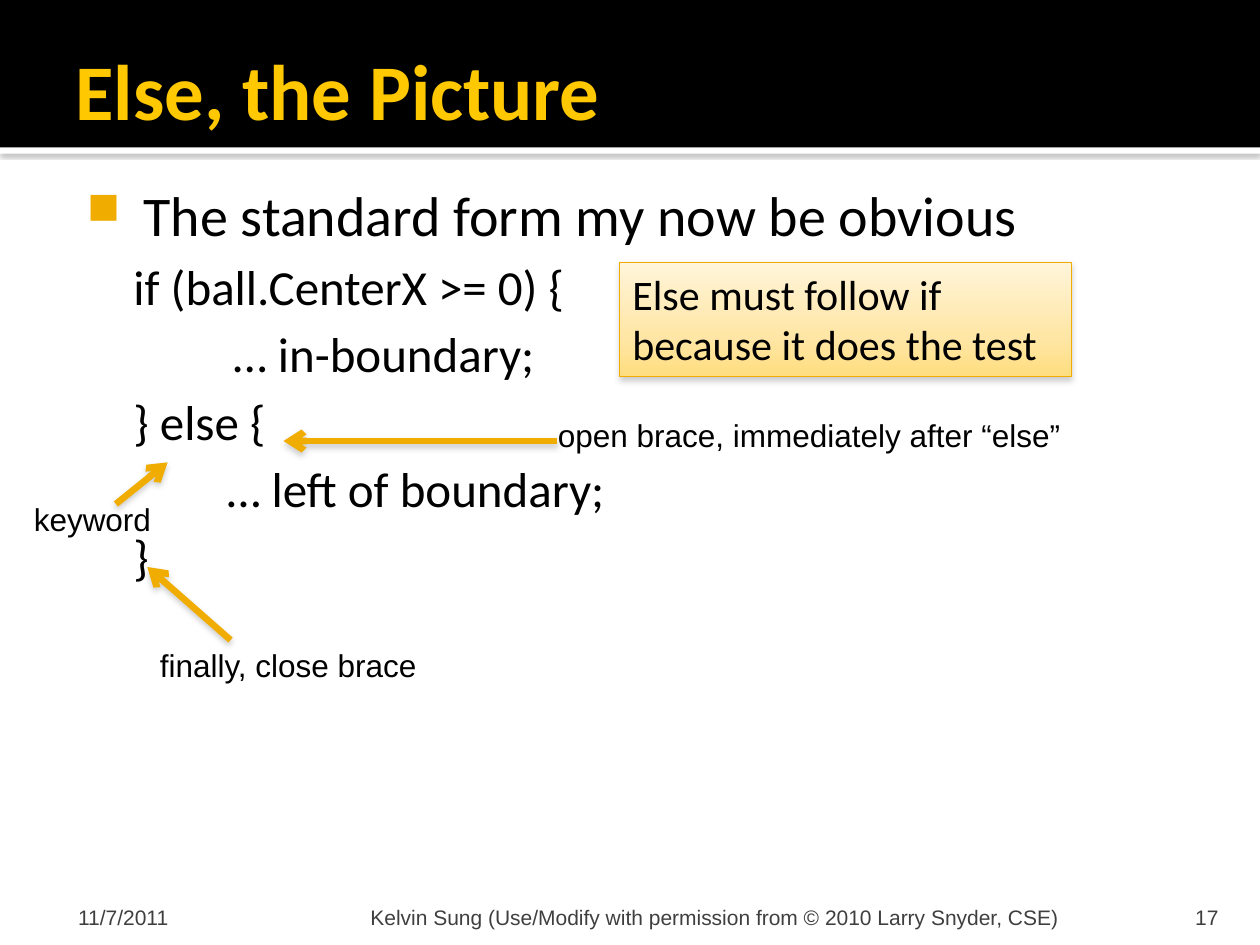
from copy import deepcopy
from typing import NamedTuple

from lxml import etree
from pptx import Presentation
from pptx.dml.color import RGBColor
from pptx.enum import shapes, text
from pptx.oxml.ns import qn
from pptx.util import Inches, Pt

COLORS = {
    "black": "000000", "white": "FFFFFF", "title": "FFC800", "accent": "F0AD00",
    "footer": "3F3F3F", "border": "F0AC00", "shadow": "808080",
}
CALLOUT_STOPS = [(0, "FFF5DA"), (0.65, "FFE6A6"), (1, "FFDE7F")]
DEFAULT_INSETS = (0.1, 0.05, 0.1, 0.05)


class Box(NamedTuple):
    left: float
    top: float
    width: float
    height: float

    def lengths(self):
        return [Inches(value) for value in self]


class Shadow(NamedTuple):
    alpha: int
    blur: float
    distance: float


class Note(NamedTuple):
    words: str
    box: Box
    arrow_start: tuple[float, float]
    arrow_end: tuple[float, float]


class Footer(NamedTuple):
    words: str
    box: Box
    insets: tuple[float, float, float, float]
    align: text.PP_ALIGN = text.PP_ALIGN.LEFT


class BodyLine(NamedTuple):
    words: str
    margin: float


SOFT_SHADOW = Shadow(38, 3.5, 2)
BAR_SHADOW = Shadow(60, 2.5, 0.8)

NOTES = [
    Note("finally, close brace", Box(1.17, 5.08, 2.26, 0.4), (1.83, 5.08), (1.17, 4.5)),
    Note("keyword", Box(0.17, 3.92, 1.14, 0.4), (0.92, 4), (1.33, 3.67)),
    Note("open brace, immediately after “else”", Box(4.33, 3.25, 4.23, 0.4),
         (4.42, 3.5), (2.25, 3.5)),
]
FOOTERS = [
    Footer("11/7/2011", Box(0.5, 7.08, 2.33, 0.3), (0.12, 0.05, 0.05, 0)),
    Footer("Kelvin Sung (Use/Modify with permission from © 2010 Larry Snyder, CSE)",
           Box(2.89, 7.08, 6.02, 0.3), (0.05, 0.05, 0.05, 0)),
    Footer("17", Box(8.97, 7.08, 0.8, 0.3), (0.1, 0.05, 0.1, 0), text.PP_ALIGN.RIGHT),
]
CODE_LINES = [
    BodyLine("if (ball.CenterX >= 0) {", 0.5),
    BodyLine("… in-boundary;", 1.29),
    BodyLine("} else {", 0.5),
    BodyLine("… left of boundary;", 1.24),
    BodyLine("}", 0.5),
]


def rgb(name: str) -> RGBColor:
    return RGBColor.from_string(COLORS[name])


def set_frame(shape, insets=DEFAULT_INSETS, anchor=text.MSO_ANCHOR.TOP, wrap=True):
    frame = shape.text_frame
    frame.auto_size = text.MSO_AUTO_SIZE.NONE
    frame.word_wrap = wrap
    frame.vertical_anchor = anchor
    (frame.margin_left, frame.margin_top,
     frame.margin_right, frame.margin_bottom) = [Inches(inset) for inset in insets]
    return frame


def write(paragraph, words: str, *, size: float, font="Calibri", color="black",
          bold=False, align=text.PP_ALIGN.LEFT, before=0.0):
    paragraph.alignment = align
    paragraph.space_before = Pt(before)
    run = paragraph.add_run()
    run.text = words
    run.font.size, run.font.name, run.font.bold = Pt(size), font, bold
    run.font.color.rgb = rgb(color)


def set_shadow(shape, shadow: Shadow | None = None):
    """Replace the theme shadow; call after fill and line are set."""
    effects = etree.SubElement(shape.element.spPr, qn("a:effectLst"))
    if shadow:
        outer = etree.SubElement(
            effects, qn("a:outerShdw"), blurRad=str(Pt(shadow.blur)),
            dist=str(Pt(shadow.distance)), dir="5400000", rotWithShape="0")
        color = etree.SubElement(outer, qn("a:srgbClr"), val=COLORS["shadow"])
        etree.SubElement(color, qn("a:alpha"), val=str(shadow.alpha * 1000))


def add_bar(slide, box: Box, color: str, shadow: Shadow | None = None):
    bar = slide.shapes.add_shape(shapes.MSO_SHAPE.RECTANGLE, *box.lengths())
    bar.fill.solid()
    bar.fill.fore_color.rgb = rgb(color)
    bar.line.fill.background()
    set_shadow(bar, shadow)


def add_title(slide, words: str):
    title = slide.shapes.title
    title.left, title.top, title.width, title.height = Box(0.5, 0.17, 9, 1.08).lengths()
    frame = set_frame(title, (0.1, 0.05, 0.05, 0.05), text.MSO_ANCHOR.MIDDLE)
    write(frame.paragraphs[0], words, size=45, color="title", bold=True)
    title.element.getparent().append(title.element)  # in front of the bars


def set_indent(paragraph, margin: float, indent: float = 0):
    properties = paragraph._p.get_or_add_pPr()
    properties.set("marL", str(Inches(margin)))
    properties.set("indent", str(Inches(indent)))
    return properties


def add_body(slide):
    body = slide.shapes.add_textbox(*Box(0.5, 1.33, 9, 5.67).lengths())
    frame = set_frame(body, (0.06, 0.1, 0.1, 0.05))
    heading = frame.paragraphs[0]
    write(heading, "The standard form my now be obvious", size=32)
    properties = set_indent(heading, 0.58, -0.45)
    bullet_color = etree.SubElement(properties, qn("a:buClr"))
    etree.SubElement(bullet_color, qn("a:srgbClr"), val=COLORS["accent"])
    etree.SubElement(properties, qn("a:buSzPct"), val="80000")
    etree.SubElement(properties, qn("a:buChar"), char="■")
    for line in CODE_LINES:
        paragraph = frame.add_paragraph()
        write(paragraph, line.words, size=28, before=5)
        set_indent(paragraph, line.margin)


def add_note(slide, note: Note):
    """Add a label and the arrow that leads from it to the code."""
    label = slide.shapes.add_textbox(*note.box.lengths())
    write(set_frame(label, wrap=False).paragraphs[0], note.words, size=18, font="Arial")
    ends = [Inches(value) for value in note.arrow_start + note.arrow_end]
    arrow = slide.shapes.add_connector(shapes.MSO_CONNECTOR.STRAIGHT, *ends)
    arrow.line.color.rgb = rgb("accent")
    arrow.line.width = Pt(3.78)
    etree.SubElement(arrow.element.spPr.find(qn("a:ln")), qn("a:tailEnd"), type="arrow")
    set_shadow(arrow, SOFT_SHADOW)


def add_callout(slide, words: str):
    callout = slide.shapes.add_shape(
        shapes.MSO_SHAPE.RECTANGLE, *Box(4.92, 2.08, 3.58, 0.91).lengths())
    callout.fill.gradient()
    callout.fill.gradient_angle = 270
    stops = callout.element.spPr.find(".//" + qn("a:gsLst"))
    stops.insert(1, deepcopy(stops[0]))
    for stop, (position, color) in zip(callout.fill.gradient_stops, CALLOUT_STOPS):
        stop.position = position
        stop.color.rgb = RGBColor.from_string(color)
    callout.line.color.rgb = rgb("border")
    callout.line.width = Pt(0.5)
    set_shadow(callout, SOFT_SHADOW)
    write(set_frame(callout).paragraphs[0], words, size=24)


def add_footer(slide, footer: Footer):
    shape = slide.shapes.add_textbox(*footer.box.lengths())
    frame = set_frame(shape, footer.insets, text.MSO_ANCHOR.BOTTOM)
    write(frame.paragraphs[0], footer.words, size=12, font="Arial", color="footer",
          align=footer.align)


def main():
    presentation = Presentation()
    presentation.slide_width, presentation.slide_height = Inches(10), Inches(7.5)
    slide = presentation.slides.add_slide(presentation.slide_layouts[5])
    add_bar(slide, Box(0, 1.17, 10, 0.05), "white", BAR_SHADOW)
    add_bar(slide, Box(0, 0, 10, 1.17), "black")
    add_title(slide, "Else, the Picture")
    add_body(slide)
    for footer in FOOTERS:
        add_footer(slide, footer)
    for note in NOTES:
        add_note(slide, note)
    add_callout(slide, "Else must follow if because it does the test")
    presentation.save("out.pptx")


if __name__ == "__main__":
    main()
